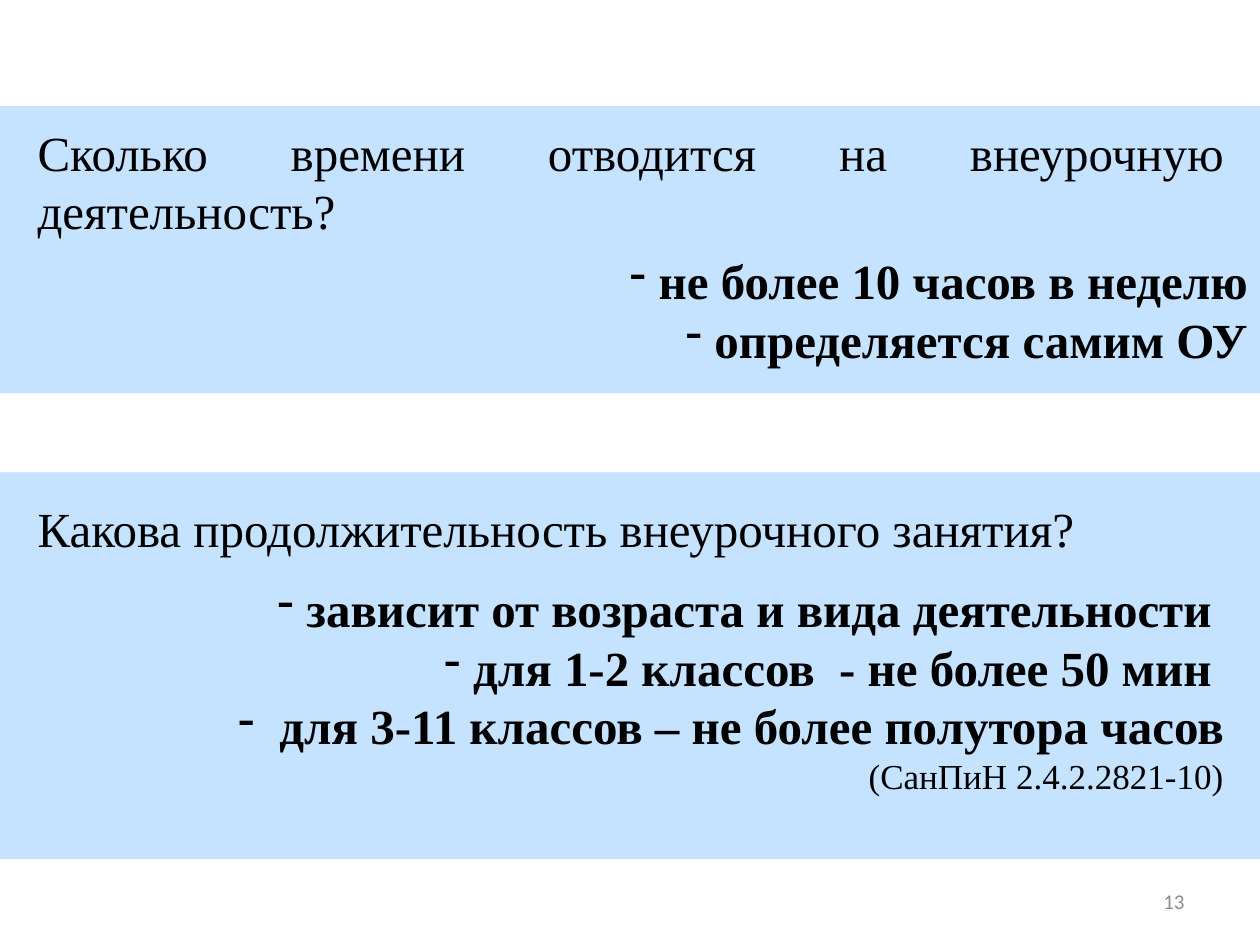
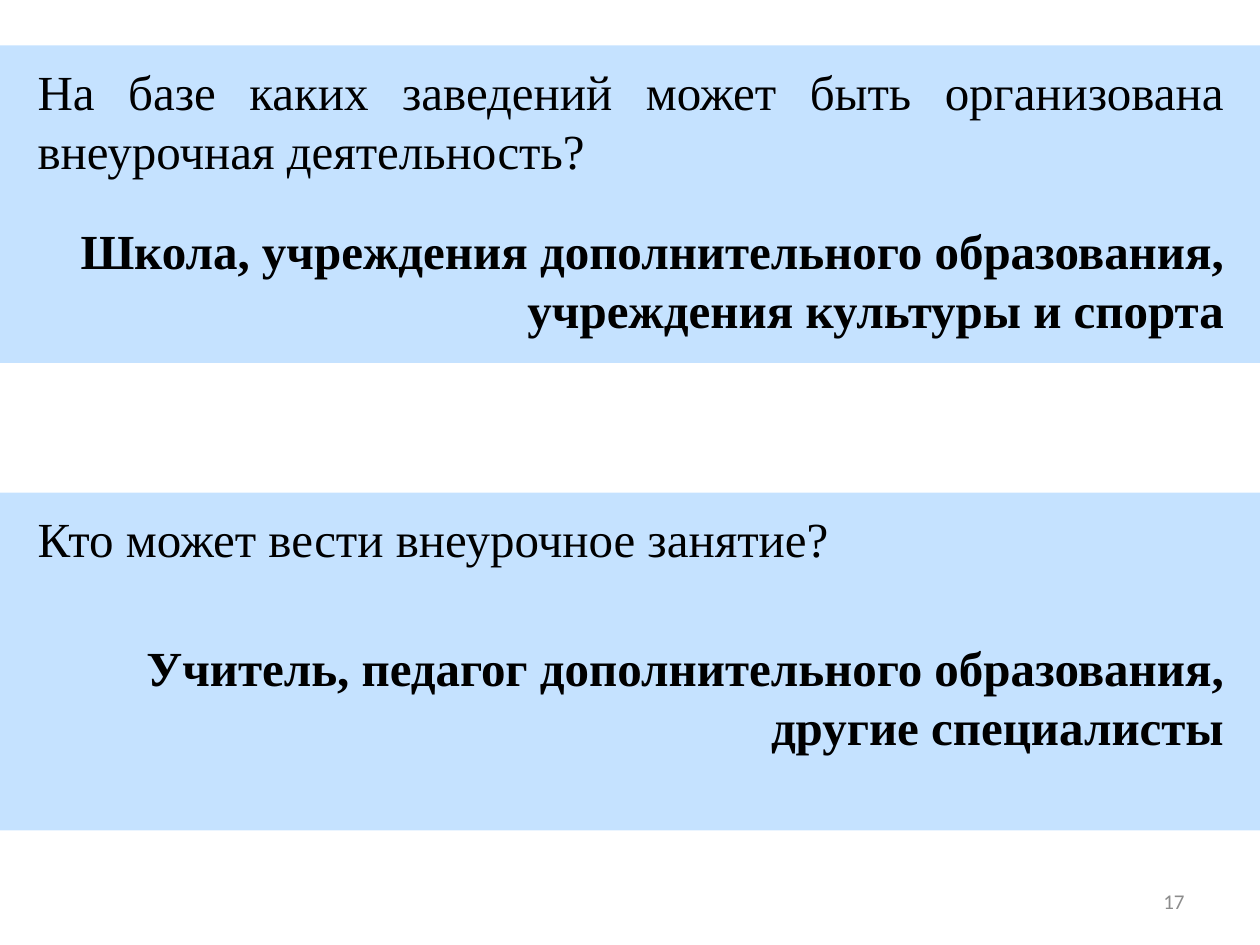
from lxml.etree import SubElement
from pptx import Presentation
from pptx.dml.color import RGBColor
from pptx.enum.shapes import MSO_SHAPE as Shape
from pptx.enum.text import MSO_ANCHOR as Anchor, MSO_AUTO_SIZE as AutoSize, PP_ALIGN as Align
from pptx.oxml.ns import qn
from pptx.util import Inches, Pt

COLORS = {"band": "99CCFF", "text": "000000", "number": "8C8C8C"}
FORMATS = {
    "question": {"name": "Times New Roman", "size": Pt(28), "bold": False},
    "answer": {"name": "Times New Roman", "size": Pt(28), "bold": True},
    "source": {"name": "Times New Roman", "size": Pt(20), "bold": False},
    "number": {"name": "Calibri", "size": Pt(12), "bold": False},
}
COLUMNS, ROWS = 100, 75
MARGIN, TEXT_WIDTH = 2, 96.1
BAND_OPACITY = 56
BULLET_INDENT = Inches(0.23)

SLIDES = [
    {"number": "13", "blocks": [
        {"band": (8.4, 22.8), "question_row": 9.2, "answer_row": 19.4,
         "question_lines": 2, "answer_column": 3.9,
         "question": "Сколько времени отводится на внеурочную деятельность? ",
         "answers": ["не более 10 часов в неделю", "определяется самим ОУ"],
         "bulleted": True},
        {"band": (37.5, 30.7), "question_row": 39.1, "answer_row": 45.4,
         "question": "Какова продолжительность внеурочного занятия? ",
         "answers": ["зависит от возраста и вида деятельности ",
                     "для 1-2 классов  - не более 50 мин ",
                     " для 3-11 классов – не более полутора часов"],
         "bulleted": True, "source": "(СанПиН 2.4.2.2821-10)"},
    ]},
    {"number": "17", "blocks": [
        {"band": (3.6, 25.2), "question_row": 4.4, "answer_row": 17,
         "question_lines": 2,
         "question": "На базе каких заведений может быть организована "
                     "внеурочная деятельность? ",
         "answers": ["Школа, учреждения дополнительного образования, "
                     "учреждения культуры и спорта"]},
        {"band": (39.1, 26.8), "question_row": 39.9, "answer_row": 50.1,
         "question": "Кто может вести внеурочное занятие? ",
         "answers": ["Учитель, педагог дополнительного образования, "
                     "другие специалисты"]},
    ]},
]


class Deck:
    def __init__(self):
        self.presentation = Presentation()
        self.presentation.slide_width = Inches(10)
        self.presentation.slide_height = Inches(7.5)
        self.column = self.presentation.slide_width / COLUMNS
        self.row = self.presentation.slide_height / ROWS
        self.slide = None

    def add_slide(self):
        self.slide = self.presentation.slides.add_slide(self.presentation.slide_layouts[6])

    def place(self, left, top, width, height):
        return (round(left * self.column), round(top * self.row),
                round(width * self.column), round(height * self.row))

    def band(self, top, height):
        shape = self.slide.shapes.add_shape(
            Shape.RECTANGLE, *self.place(0, top, COLUMNS, height))
        shape.shadow.inherit = False
        shape.line.fill.background()
        shape.fill.solid()
        shape.fill.fore_color.rgb = RGBColor.from_string(COLORS["band"])
        color = shape.fill._xPr.find(".//" + qn("a:srgbClr"))
        SubElement(color, qn("a:alpha"), val=str(BAND_OPACITY * 1000))

    def text(self, box, lines, align, color="text", anchor=Anchor.TOP,
             auto_size=AutoSize.SHAPE_TO_FIT_TEXT):
        frame = self.slide.shapes.add_textbox(*self.place(*box)).text_frame
        settings = {"word_wrap": True, "auto_size": auto_size, "vertical_anchor": anchor}
        for name, value in settings.items():
            setattr(frame, name, value)
        for index, (content, style, bulleted) in enumerate(lines):
            paragraph = frame.add_paragraph() if index else frame.paragraphs[0]
            paragraph.alignment = align
            run = paragraph.add_run()
            run.text = content
            for name, value in FORMATS[style].items():
                setattr(run.font, name, value)
            run.font.color.rgb = RGBColor.from_string(COLORS[color])
            if bulleted:
                self.bullet(paragraph)

    def bullet(self, paragraph):
        properties = paragraph._p.get_or_add_pPr()
        properties.set("marL", str(BULLET_INDENT))
        properties.set("indent", str(-BULLET_INDENT))
        SubElement(properties, qn("a:buFontTx"))
        SubElement(properties, qn("a:buChar"), char="-")

    def block(self, band, question_row, answer_row, question, answers,
              question_lines=1, answer_column=MARGIN, bulleted=False, source=None):
        self.band(*band)
        question_height = 1 + 4.7 * question_lines
        self.text((MARGIN, question_row, TEXT_WIDTH, question_height),
                  [(question, "question", False)], Align.JUSTIFY)
        lines = [(answer, "answer", bulleted) for answer in answers]
        if source:
            lines.append((source, "source", False))
        answer_height = 18.5 if source else 10.4
        self.text((answer_column, answer_row, TEXT_WIDTH, answer_height), lines, Align.RIGHT)

    def number(self, value):
        self.text((71.7, 69.5, 23.3, 4), [(value, "number", False)], Align.RIGHT,
                  "number", Anchor.MIDDLE, AutoSize.NONE)


def main():
    deck = Deck()
    for content in SLIDES:
        deck.add_slide()
        for block in content["blocks"]:
            deck.block(**block)
        deck.number(content["number"])
    deck.presentation.save("out.pptx")


if __name__ == "__main__":
    main()
